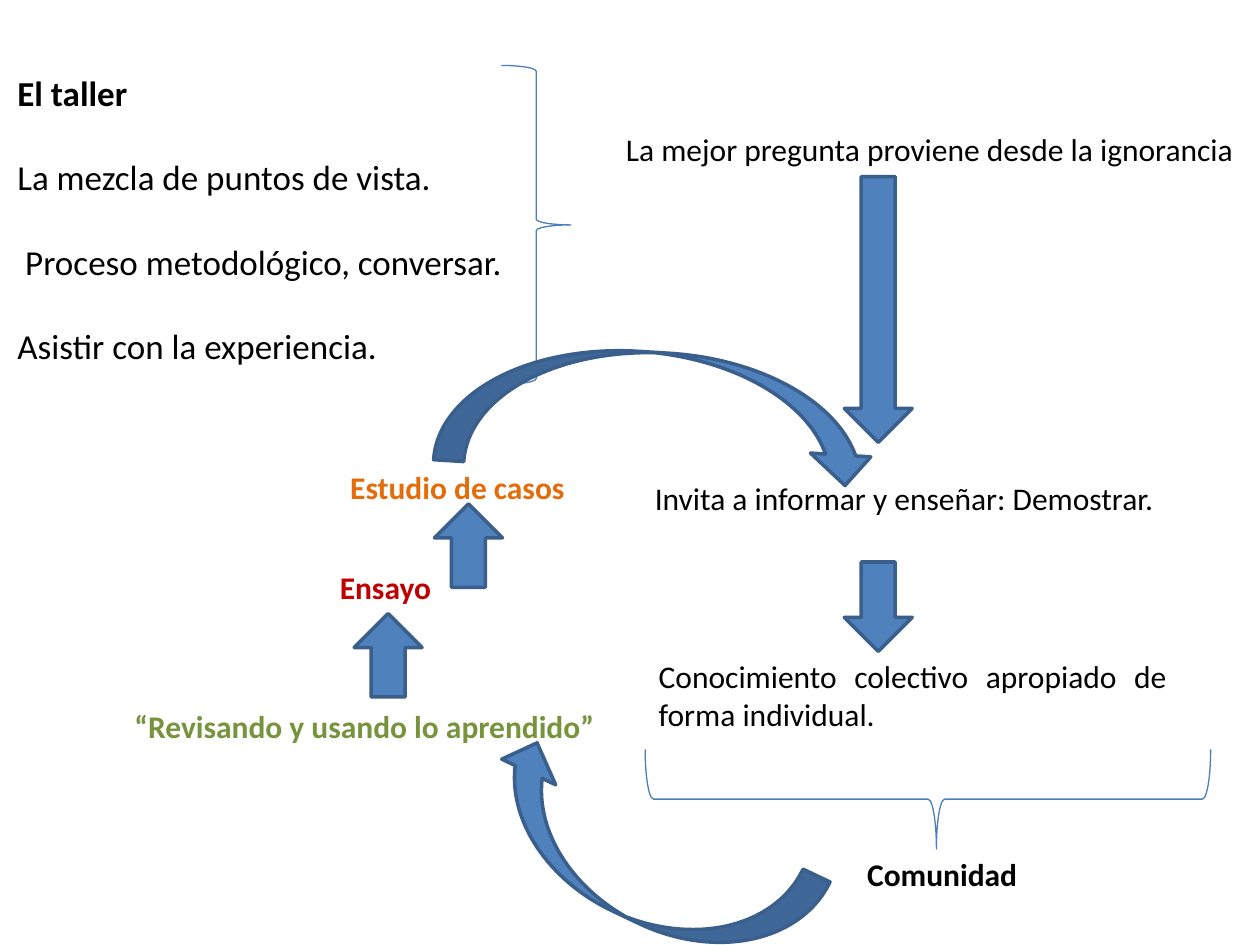
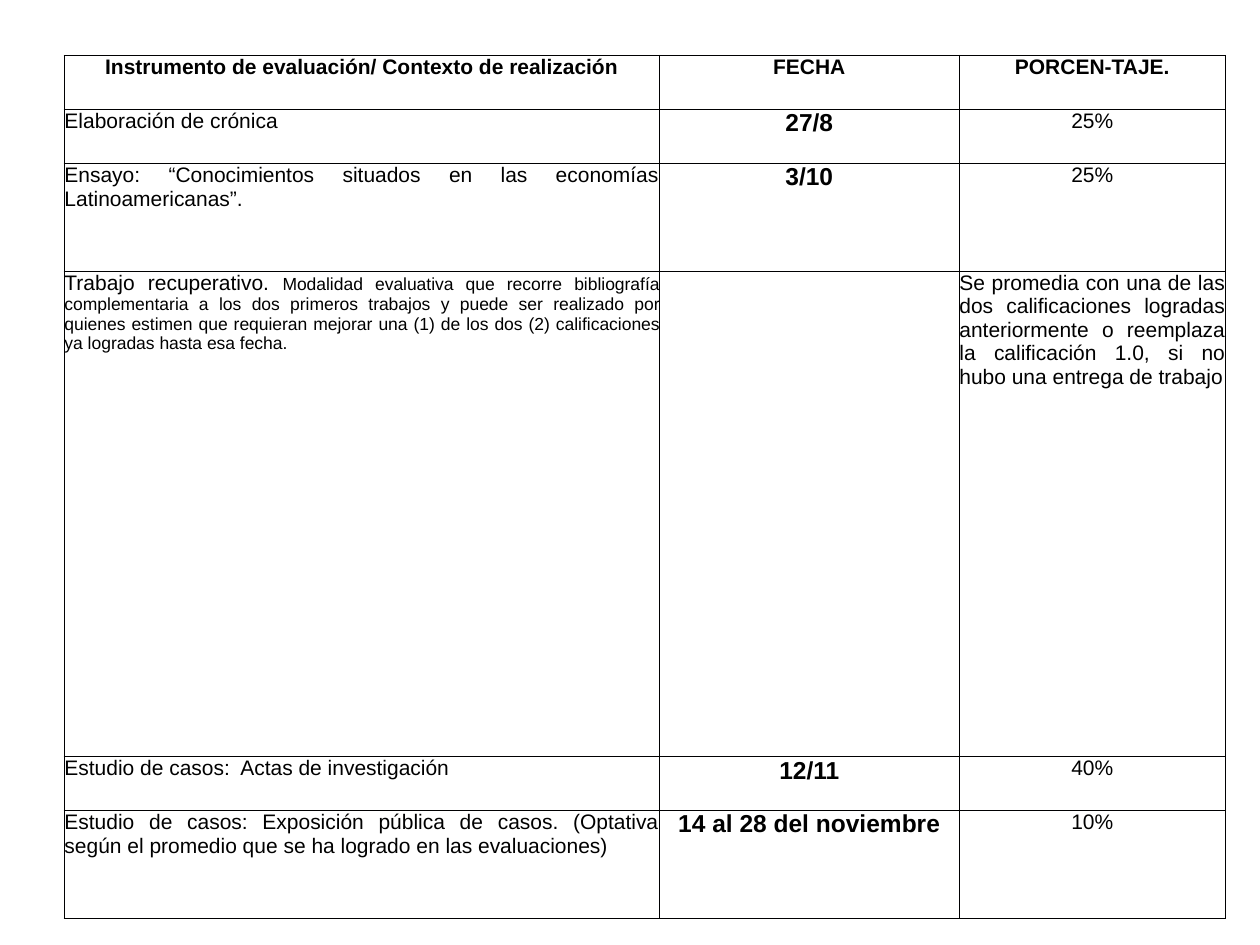
from lxml import etree
from pptx import Presentation
from pptx.dml.color import RGBColor
from pptx.enum.shapes import MSO_SHAPE
from pptx.enum.text import MSO_AUTO_SIZE, PP_ALIGN
from pptx.oxml.ns import qn
from pptx.util import Cm, Pt

BRACE = MSO_SHAPE.RIGHT_BRACE
DOWN = MSO_SHAPE.DOWN_ARROW
UP = MSO_SHAPE.UP_ARROW
CURVE = MSO_SHAPE.CURVED_DOWN_ARROW
LEFT, MID, JUST = PP_ALIGN.LEFT, PP_ALIGN.CENTER, PP_ALIGN.JUSTIFY
FIT = MSO_AUTO_SIZE.SHAPE_TO_FIT_TEXT

BLACK, BLUE, NAVY, THIN = "000000", "4F81BD", "3A5F8C", "4B7EBC"
GREEN, RED, ORANGE = "77933C", "C00000", "E46C0A"
BORDER = "000001"
LINE = 1.02  # height of a one-line text box
ARROW = 1.37  # width of a straight arrow


def hue(code):
    return RGBColor.from_string(code)


def place(box, x, y, w, h):
    """Turn cm offsets inside a box into slide lengths."""
    return Cm(box[0] + x), Cm(box[1] + y), Cm(w), Cm(h)


def style(run, color=BLACK, **form):
    for key, value in form.items():
        setattr(run.font, key, value)
    run.font.color.rgb = hue(color)


def write(slide, spot, lines, align=LEFT, wrap=True, gap=0):
    """Add a text box; each line is a (text, format) pair."""
    frame = slide.shapes.add_textbox(*spot).text_frame
    frame.word_wrap = wrap
    frame.auto_size = FIT
    for i, (text, form) in enumerate(lines):
        para = frame.paragraphs[0] if i == 0 else frame.add_paragraph()
        para.alignment = align
        if i < len(lines) - 1:
            para.space_after = Pt(gap)
        run = para.add_run()
        run.text = text
        style(run, **{"name": "Calibri", "size": Pt(18), **form})


def draw(slide, kind, spot, turn=0):
    """Add a blue arrow, or a thin unfilled brace."""
    shape = slide.shapes.add_shape(kind, *spot)
    shape.shadow.inherit = False
    shape.rotation = turn
    if kind == BRACE:
        shape.fill.background()
    else:
        shape.fill.solid()
        shape.fill.fore_color.rgb = hue(BLUE)
    shape.line.color.rgb = hue(THIN if kind == BRACE else NAVY)
    shape.line.width = Pt(0.75 if kind == BRACE else 2)
    return shape


def workshop(slide, box):
    lines = ["El taller", "La mezcla de puntos de vista.",
             " Proceso metodológico, conversar.", "Asistir con la experiencia."]
    write(slide, place(box, 0, 0, 10.69, 6.25),
          [(text, {"size": Pt(20), "bold": i == 0}) for i, text in enumerate(lines)],
          JUST, gap=24.1)
    draw(slide, BRACE, place(box, 10.01, 0, 1.4, box[3]))


def learning(slide, box):
    """Draw the column from the question down to the community."""
    write(slide, place(box, 0, 0, box[2], LINE),
          [("La mejor pregunta proviene desde la ignorancia", {})], wrap=False)
    write(slide, place(box, 0.58, 7.04, 11.4, LINE),
          [("Invita a informar y enseñar: Demostrar.", {})])
    write(slide, place(box, 0.66, 10.64, 10.74, 1.8),
          [("Conocimiento colectivo apropiado de forma individual.", {})], JUST)
    write(slide, place(box, 3.63, 14.63, 5.99, LINE),
          [("Comunidad", {"bold": True})], MID)
    for y, h in ((1.07, 5.36), (8.84, 1.8)):
        draw(slide, DOWN, place(box, 4.65, y, ARROW, h))
    brace = draw(slide, BRACE, place(box, 5.33, 7.92, 2.01, 11.4), 90)
    brace.adjustments[1] = 0.485


def cycle(slide, box):
    """Draw the three coloured steps and the arrows around them."""
    steps = [("“Revisando y usando lo aprendido”", GREEN, 0, 7.01, 10.01),
             ("Ensayo", RED, 4.14, 4.22, 2.36),
             ("Estudio de casos", ORANGE, 4.35, 2.21, 4.88)]
    for text, color, x, y, w in steps:
        write(slide, place(box, x, y, w, LINE),
              [(text, {"color": color, "bold": True})], wrap=False)
    draw(slide, CURVE, place(box, 6.96, 9.02, 7.14, 2.41), 205.4)
    for x, y in ((4.68, 5.26), (6.3, 3.05)):
        draw(slide, UP, place(box, x, y, ARROW, 1.68))
    draw(slide, CURVE, place(box, 6.35, 0, 8.92, 2.44), 3.6)


def edge(cell):
    """Give a cell thin borders on all four sides."""
    props = cell._tc.get_or_add_tcPr()
    for side in ("a:lnL", "a:lnR", "a:lnT", "a:lnB"):
        line = etree.SubElement(props, qn(side), w=str(Pt(1)))
        fill = etree.SubElement(line, qn("a:solidFill"))
        etree.SubElement(fill, qn("a:srgbClr"), val=BORDER)


def fill_cell(cell, runs, align, bold):
    """Format a cell and write its (text, size) runs."""
    edge(cell)
    cell.fill.background()
    for side in ("left", "right", "top", "bottom"):
        setattr(cell, "margin_" + side, 0)
    para = cell.text_frame.paragraphs[0]
    para.alignment = align
    for text, size in runs:
        run = para.add_run()
        run.text = text
        style(run, name="Arial", size=Pt(size), bold=bold)


def grades(slide, box):
    note = ("Modalidad evaluativa que recorre bibliografía complementaria a los dos "
            "primeros trabajos y puede ser realizado por quienes estimen que requieran "
            "mejorar una (1) de los dos (2) calificaciones ya logradas hasta esa fecha.")
    mean = ("Se promedia con una de las dos calificaciones logradas anteriormente o "
            "reemplaza la calificación 1.0, si no hubo una entrega de trabajo")
    # Row height in units, then the three cells
    rows = [
        (1, "Instrumento de evaluación/ Contexto de realización", "FECHA", "PORCEN-TAJE."),
        (1, "Elaboración de crónica", "27/8", "25%"),
        (2, "Ensayo: “Conocimientos situados en las economías Latinoamericanas”.",
         "3/10", "25%"),
        (9, "Trabajo recuperativo. ", "", mean),
        (1, "Estudio de casos:  Actas de investigación", "12/11", "40%"),
        (2, "Estudio de casos: Exposición pública de casos. (Optativa según el promedio "
            "que se ha logrado en las evaluaciones)", "14 al 28 del noviembre", "10%"),
    ]
    widths = (11.99, 6.05, 5.36)
    unit = box[3] / sum(row[0] for row in rows)
    table = slide.shapes.add_table(len(rows), len(widths),
                                   *place(box, 0, 0, *box[2:])).table
    table.first_row = table.horz_banding = False
    for col, width in zip(table.columns, widths):
        col.width = Cm(width)
    for r, (units, *texts) in enumerate(rows):
        table.rows[r].height = Cm(units * unit)
        for c, text in enumerate(texts):
            head, date = r == 0, c == 1
            runs = [(text, 14 if date and not head else 12)] if text else []
            if units == 9 and c == 0:
                runs.append((note, 10))
            flush = not head and (c == 0 or text == mean)
            fill_cell(table.cell(r, c), runs, JUST if flush else MID, head or date)


def main():
    deck = Presentation()
    deck.slide_width, deck.slide_height = Cm(25.4), Cm(19.05)
    blank = deck.slide_layouts[6]
    scheme = deck.slides.add_slide(blank)
    workshop(scheme, (0.1, 1.32, 11.41, 6.43))
    learning(scheme, (12.37, 2.49, 12.78, 15.65))
    cycle(scheme, (2.46, 7.11, 15.27, 11.43))
    grades(deck.slides.add_slide(blank), (1.3, 1.12, 23.4, 17.4))
    deck.save("out.pptx")


if __name__ == "__main__":
    main()
